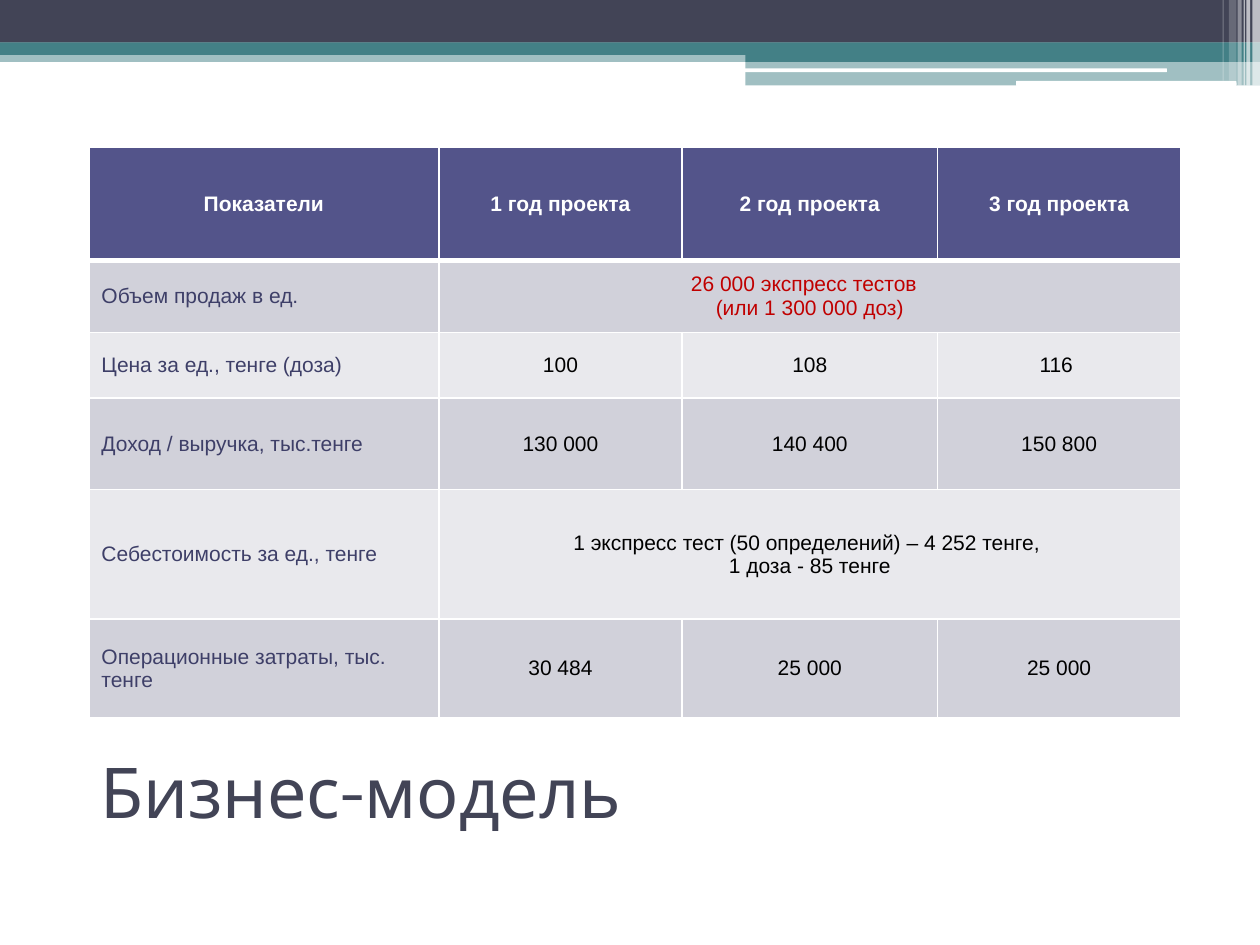
import lxml.etree
import pptx
import pptx.dml.color
import pptx.enum.shapes
import pptx.enum.text
import pptx.oxml.ns
import pptx.util

Pt = pptx.util.Pt
SHAPE = pptx.enum.shapes.MSO_SHAPE
ALIGN = pptx.enum.text.PP_ALIGN
MIDDLE = pptx.enum.text.MSO_ANCHOR.MIDDLE
qn = pptx.oxml.ns.qn

THEME = {
    "dark": "424456", "teal": "438086", "white": "FFFFFF", "header": "53548A",
    "band_dark": "D1D1DA", "band_light": "E9E9ED",
    "label": "3E3F68", "accent": "C00000", "value": "000000",
    "title_font": "Karla", "table_font": "Arial",
    "title_size": 40, "table_size": 12,
}


def set_fill(fill, color, opacity=100):
    """Fill with a theme colour; opacity is in percent."""
    fill.solid()
    fill.fore_color.rgb = pptx.dml.color.RGBColor.from_string(THEME[color])
    if opacity < 100:
        srgb = fill._xPr.find(".//" + qn("a:srgbClr"))
        lxml.etree.SubElement(srgb, qn("a:alpha"), val=str(opacity * 1000))


def format_text(frame, font, size, color, align, bold=False):
    for para in frame.paragraphs:
        para.alignment = align
        for span in para.runs:
            span.font.name = THEME[font]
            span.font.size = Pt(THEME[size])
            span.font.bold = bold
            span.font.color.rgb = pptx.dml.color.RGBColor.from_string(THEME[color])


deck = pptx.Presentation()
deck.slide_width, deck.slide_height = Pt(720), Pt(540)
page = deck.slides.add_slide(deck.slide_layouts[5])

# Header bands and highlights: left, top, width, height, colour, opacity
bands = [
    (0, 28.8, 720, 6.6, "teal", 50),
    (0, 0, 720, 24.4, "dark", 100),
    (0, 24.2, 720, 7.2, "teal", 100),
    (426, 28.2, 294, 7.2, "teal", 100),
    (426, 35.4, 294, 13.5, "teal", 50),
]
rounded_lines = [
    (425.6, 39.1, 241.2, 2.2, "white", 100),
    (580.6, 46.2, 126, 2.9, "white", 100),
]
stripes = [
    (left, 0, width, height, "white", opacity)
    for left, width, height, opacity in [
        (715.6, 4.4, 49, 65), (712.2, 2.2, 49, 65), (710.7, 0.7, 49, 60),
        (707.3, 2.2, 49, 40), (702.2, 4.3, 46.1, 20), (698.6, 0.7, 46.1, 30),
    ]
]
for kind, group in (
    (SHAPE.RECTANGLE, bands),
    (SHAPE.ROUNDED_RECTANGLE, rounded_lines),
    (SHAPE.RECTANGLE, stripes),
):
    for left, top, width, height, color, opacity in group:
        bar = page.shapes.add_shape(kind, Pt(left), Pt(top), Pt(width), Pt(height))
        bar.shadow.inherit = False
        bar.line.fill.background()
        set_fill(bar.fill, color, opacity)

title = page.shapes.title
title.left, title.top, title.width, title.height = Pt(50.4), Pt(410.4), Pt(644.4), Pt(82.8)
title.text_frame.text = "Бизнес-модель"
title.text_frame.auto_size = pptx.enum.text.MSO_AUTO_SIZE.NONE
title.text_frame.vertical_anchor = MIDDLE
format_text(title.text_frame, "title_font", "title_size", "dark", ALIGN.LEFT)

# A row with a single value spans all three years
rows = [
    ["Показатели", "1 год проекта", "2 год проекта", "3 год проекта"],
    ["Объем продаж в ед.", "26\u00a0000 экспресс тестов  \n(или 1 300 000 доз)"],
    ["Цена за ед., тенге (доза)", "100", "108", "116 "],
    ["Доход / выручка, тыс.тенге", "130 000", "140 400", "150 800"],
    ["Себестоимость за ед., тенге",
     "1 экспресс тест (50 определений) – 4 252 тенге, \n1 доза - 85 тенге"],
    ["Операционные затраты, тыс. тенге", "30 484", "25 000", "25 000"],
]
column_widths = [200, 139, 146, 139]
row_heights = [64.5, 41, 37.5, 52.5, 74, 56.5]
frame = page.shapes.add_table(
    len(rows), len(column_widths), Pt(50.8), Pt(84.4),
    Pt(sum(column_widths)), Pt(sum(row_heights)),
)
table = frame.table
for column, width in zip(table.columns, column_widths):
    column.width = Pt(width)

for r, texts in enumerate(rows):
    table.rows[r].height = Pt(row_heights[r])
    if len(texts) == 2:
        table.cell(r, 1).merge(table.cell(r, 3))
    for c in range(len(column_widths)):
        cell = table.cell(r, c)
        cell.vertical_anchor = MIDDLE
        properties = cell._tc.get_or_add_tcPr()
        for side in ("L", "R", "T", "B"):
            heavy = (r == 0 and side == "B") or (r == 1 and side == "T")
            border = lxml.etree.SubElement(
                properties, qn("a:ln" + side), w=str(Pt(3 if heavy else 1)))
            solid = lxml.etree.SubElement(border, qn("a:solidFill"))
            lxml.etree.SubElement(solid, qn("a:srgbClr"), val=THEME["white"])
        set_fill(cell.fill, "header" if r == 0 else "band_dark" if r % 2 else "band_light")
        if c < len(texts):
            cell.text_frame.text = texts[c]
            if r == 0:
                color = "white"
            elif c == 0:
                color = "label"
            else:
                color = "accent" if r == 1 else "value"
            align = ALIGN.LEFT if c == 0 and r else ALIGN.CENTER
            format_text(cell.text_frame, "table_font", "table_size", color, align, r == 0)

deck.save("out.pptx")
